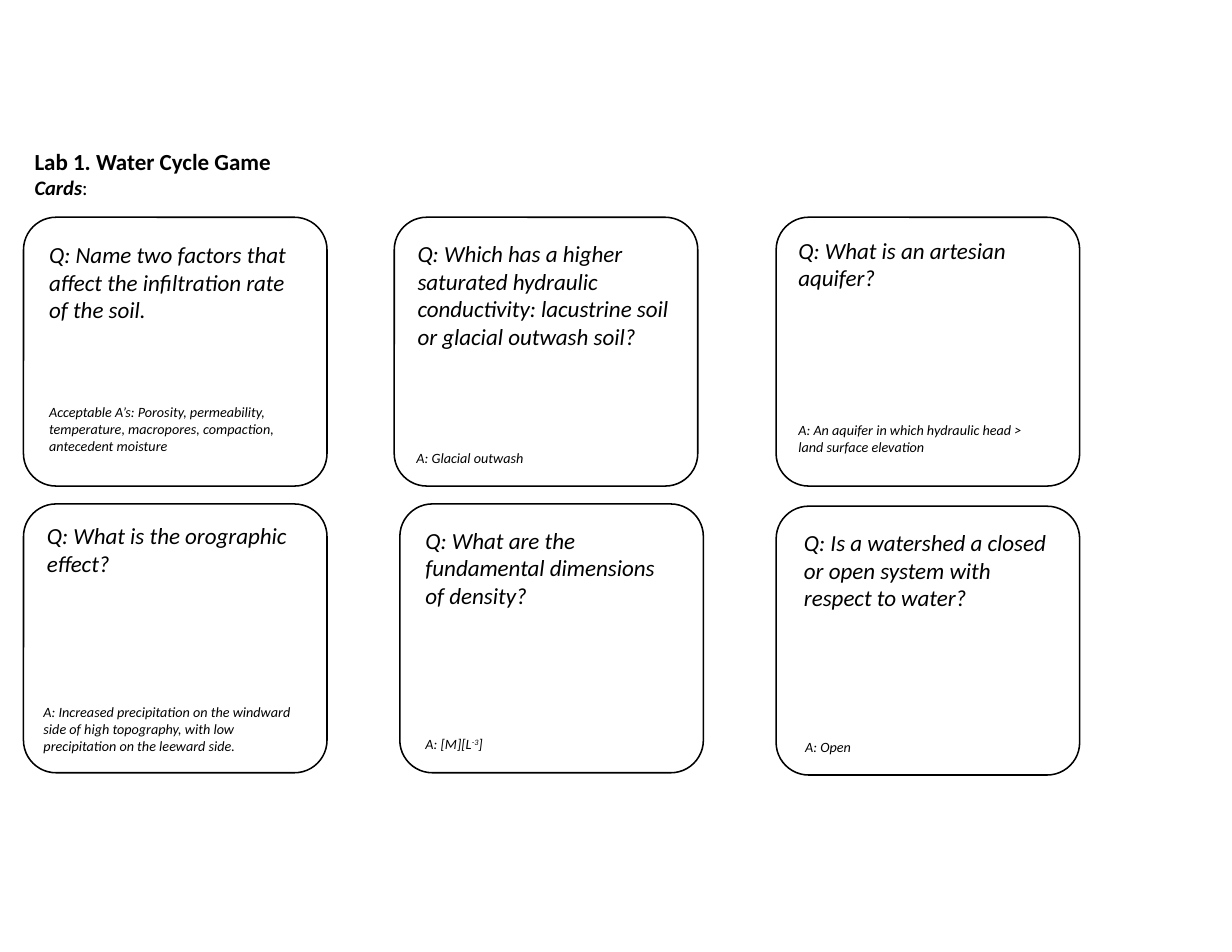
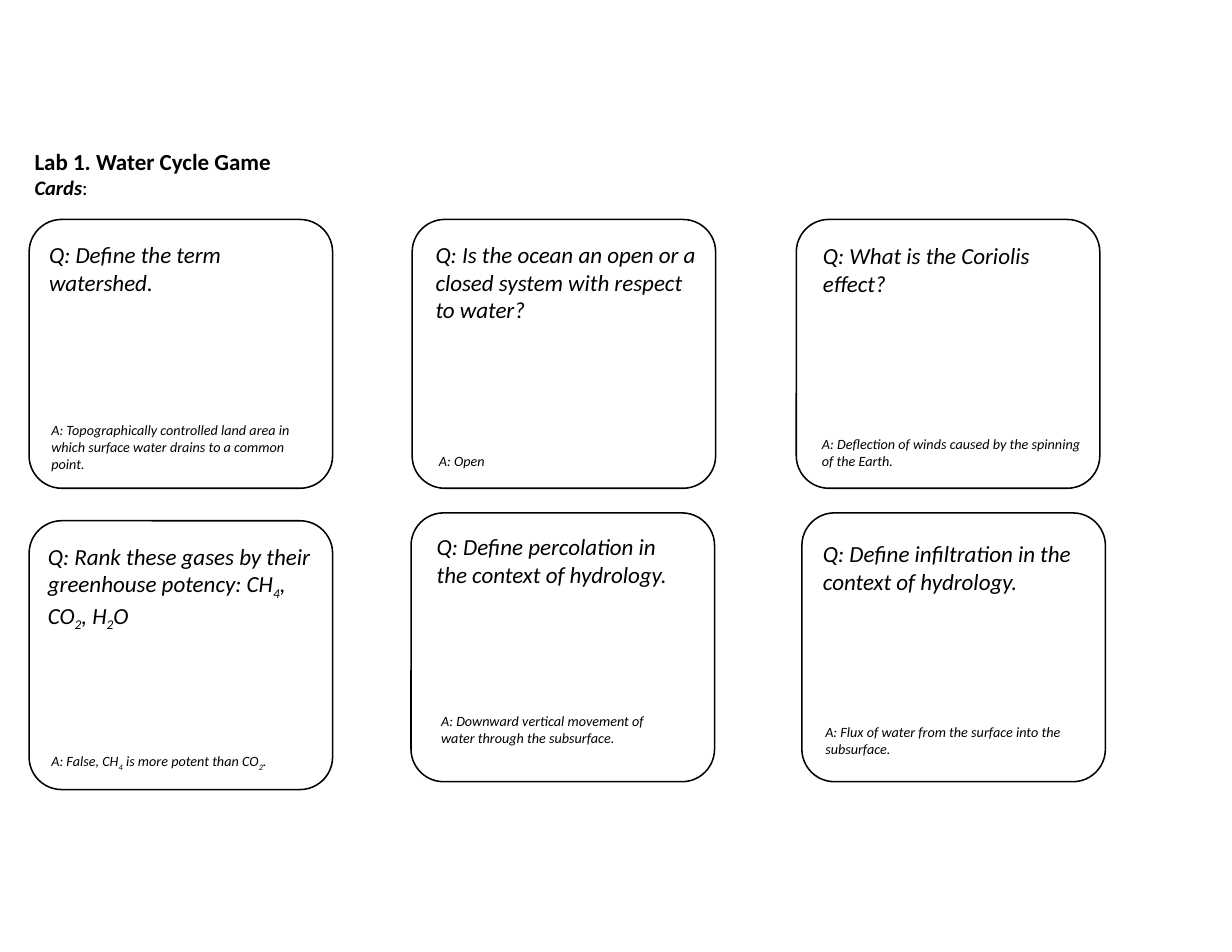
from dataclasses import dataclass
from typing import NamedTuple

from pptx import Presentation
from pptx.dml.color import RGBColor
from pptx.enum.shapes import MSO_SHAPE
from pptx.enum.text import MSO_AUTO_SIZE
from pptx.util import Inches, Pt

ROUNDED = MSO_SHAPE.ROUNDED_RECTANGLE
GROW = MSO_AUTO_SIZE.SHAPE_TO_FIT_TEXT

# Shared look
SLIDE_W, SLIDE_H = 11, 8.5
INK = "000000"
FONT = "Calibri"
HEADING_SIZE, SUBHEADING_SIZE = 14.8, 13.2
QUESTION_SIZE, ANSWER_SIZE = 14.8, 9.1
QUESTION_LINE, ANSWER_LINE = 0.25, 0.155  # line heights
BOX_MARGINS = 0.1  # top and bottom inset together
CARD_W, CARD_H, CARD_CORNER = 2.71, 2.4, 0.121
SUB, SUPER = -25, 30


class Box(NamedTuple):
    left: float
    top: float
    width: float
    height: float


class Run(NamedTuple):
    text: str
    baseline: int = 0
    bold: bool | None = None
    italic: bool | None = None
    size: float | None = None


class Note(NamedTuple):
    """Words on a card, placed from the card's top left corner."""
    dx: float
    dy: float
    width: float
    lines: int
    runs: list[Run]


@dataclass
class Card:
    column: int
    row: int
    question: Note
    answer: Note
    nudge_x: float = 0
    nudge_y: float = 0


@dataclass
class CardSheet:
    left: float
    top: float
    column_step: float
    row_step: float
    cards: list[Card]

    def card_box(self, card: Card) -> Box:
        return Box(self.left + card.column * self.column_step + card.nudge_x,
                   self.top + card.row * self.row_step + card.nudge_y,
                   CARD_W, CARD_H)


HEADING = [
    [Run("Lab 1. Water Cycle Game", bold=True)],
    [Run("Cards", bold=True, italic=True, size=SUBHEADING_SIZE),
     Run(":", size=SUBHEADING_SIZE)],
]

SHEETS = [
    CardSheet(0.21, 1.94, 3.36, 2.56, [
        Card(0, 0,
             Note(0.13, 0.16, 2.45, 3, [Run(
                 "Q: Name two factors that affect the infiltration rate of the soil.")]),
             Note(0.13, 1.61, 2.49, 3, [Run(
                 "Acceptable A’s: Porosity, permeability, temperature, "
                 "macropores, compaction, antecedent moisture")])),
        Card(0, 1,
             Note(0.11, 0.11, 2.46, 2, [Run("Q: What is the orographic effect?")]),
             Note(0.08, 1.73, 2.56, 3, [Run(
                 "A: Increased precipitation on the windward side of high "
                 "topography, with low precipitation on the leeward side.")])),
        Card(1, 0,
             Note(0.11, 0.15, 2.54, 4, [Run(
                 "Q: Which has a higher saturated hydraulic conductivity: "
                 "lacustrine soil or glacial outwash soil?")]),
             Note(0.1, 2.02, 2.99, 1, [Run("A: Glacial outwash")]),
             nudge_x=-0.05),
        Card(1, 1,
             Note(0.13, 0.15, 2.45, 3, [Run(
                 "Q: What are the fundamental dimensions of density?")]),
             Note(0.13, 2.02, 2.51, 1, [Run("A: [M][L"), Run("-3", SUPER), Run("]")])),
        Card(2, 0,
             Note(0.1, 0.12, 2.56, 2, [Run("Q: What is an artesian aquifer?")]),
             Note(0.1, 1.77, 2.21, 2, [Run(
                 "A: An aquifer in which hydraulic head > land surface elevation")])),
        Card(2, 1,
             Note(0.15, 0.15, 2.39, 3, [Run(
                 "Q: Is a watershed a closed or open system with respect to water?")]),
             Note(0.16, 2.02, 2.39, 1, [Run("A: Open")]),
             nudge_y=0.02),
    ]),
    CardSheet(0.26, 1.96, 3.42, 2.62, [
        Card(0, 0,
             Note(0.08, 0.14, 2.54, 2, [Run("Q: Define the term watershed.")]),
             Note(0.1, 1.75, 2.52, 3, [Run(
                 "A: Topographically controlled land area in which surface "
                 "water drains to a common point.")])),
        Card(0, 1,
             Note(0.07, 0.14, 2.63, 3, [
                 Run("Q: Rank these gases by their greenhouse potency: CH"),
                 Run("4", SUB), Run(", CO"), Run("2", SUB),
                 Run(", H"), Run("2", SUB), Run("O")]),
             Note(0.1, 2.02, 2.99, 1, [
                 Run("A: False, CH"), Run("4", SUB),
                 Run(" is more potent than CO"), Run("2", SUB), Run(".")]),
             nudge_y=0.07),
        Card(1, 0,
             Note(0.11, 0.14, 2.61, 3, [Run(
                 "Q: Is the ocean an open or a closed system with respect to water?")]),
             Note(0.14, 2.03, 2.42, 1, [Run("A: Open")])),
        Card(1, 1,
             Note(0.13, 0.13, 2.45, 2, [Run(
                 "Q: Define percolation in the context of hydrology.")]),
             Note(0.17, 1.73, 2.32, 2, [Run(
                 "A: Downward vertical movement of water through the subsurface.")]),
             nudge_x=-0.01),
        Card(2, 0,
             Note(0.14, 0.15, 2.47, 2, [Run("Q: What is the Coriolis effect?")]),
             Note(0.13, 1.88, 2.55, 2, [Run(
                 "A: Deflection of winds caused by the spinning of the Earth.")]),
             nudge_x=0.01),
        Card(2, 1,
             Note(0.09, 0.19, 2.57, 2, [Run(
                 "Q: Define infiltration in the context of hydrology.")]),
             Note(0.11, 1.83, 2.51, 2, [Run(
                 "A: Flux of water from the surface into the subsurface.")]),
             nudge_x=0.06),
    ]),
]


def color(hex_code: str) -> RGBColor:
    return RGBColor.from_string(hex_code)


def place(box: Box) -> list[int]:
    return [Inches(length) for length in box]


def add_text(slide, box: Box, paragraphs: list[list[Run]], *, size: float,
             italic: bool = False) -> None:
    frame = slide.shapes.add_textbox(*place(box)).text_frame
    frame.word_wrap = True
    frame.auto_size = GROW
    for index, runs in enumerate(paragraphs):
        paragraph = frame.add_paragraph() if index else frame.paragraphs[0]
        for part in runs:
            run = paragraph.add_run()
            run.text = part.text
            font = run.font
            font.name = FONT
            font.size = Pt(part.size or size)
            font.bold = bool(part.bold)
            font.italic = italic if part.italic is None else part.italic
            font.color.rgb = color(INK)
            if part.baseline:
                run._r.get_or_add_rPr().set("baseline", str(part.baseline * 1000))


def add_note(slide, card_box: Box, note: Note, size: float, line: float) -> None:
    box = Box(card_box.left + note.dx, card_box.top + note.dy,
              note.width, note.lines * line + BOX_MARGINS)
    add_text(slide, box, [note.runs], size=size, italic=True)


def add_outline(slide, box: Box) -> None:
    outline = slide.shapes.add_shape(ROUNDED, *place(box))
    outline.adjustments[0] = CARD_CORNER
    outline.shadow.inherit = False
    outline.fill.background()
    outline.line.color.rgb = color(INK)
    outline.line.width = Pt(1)


def add_sheet(deck, sheet: CardSheet) -> None:
    slide = deck.slides.add_slide(deck.slide_layouts[6])
    add_text(slide, Box(0.21, 1.27, 10.51, 0.57), HEADING, size=HEADING_SIZE)
    # Questions and answers
    for card in sheet.cards:
        box = sheet.card_box(card)
        add_note(slide, box, card.question, QUESTION_SIZE, QUESTION_LINE)
        add_note(slide, box, card.answer, ANSWER_SIZE, ANSWER_LINE)
    # Card outlines
    for card in sheet.cards:
        add_outline(slide, sheet.card_box(card))


def main() -> None:
    deck = Presentation()
    deck.slide_width, deck.slide_height = Inches(SLIDE_W), Inches(SLIDE_H)
    for sheet in SHEETS:
        add_sheet(deck, sheet)
    deck.save("out.pptx")


if __name__ == "__main__":
    main()
